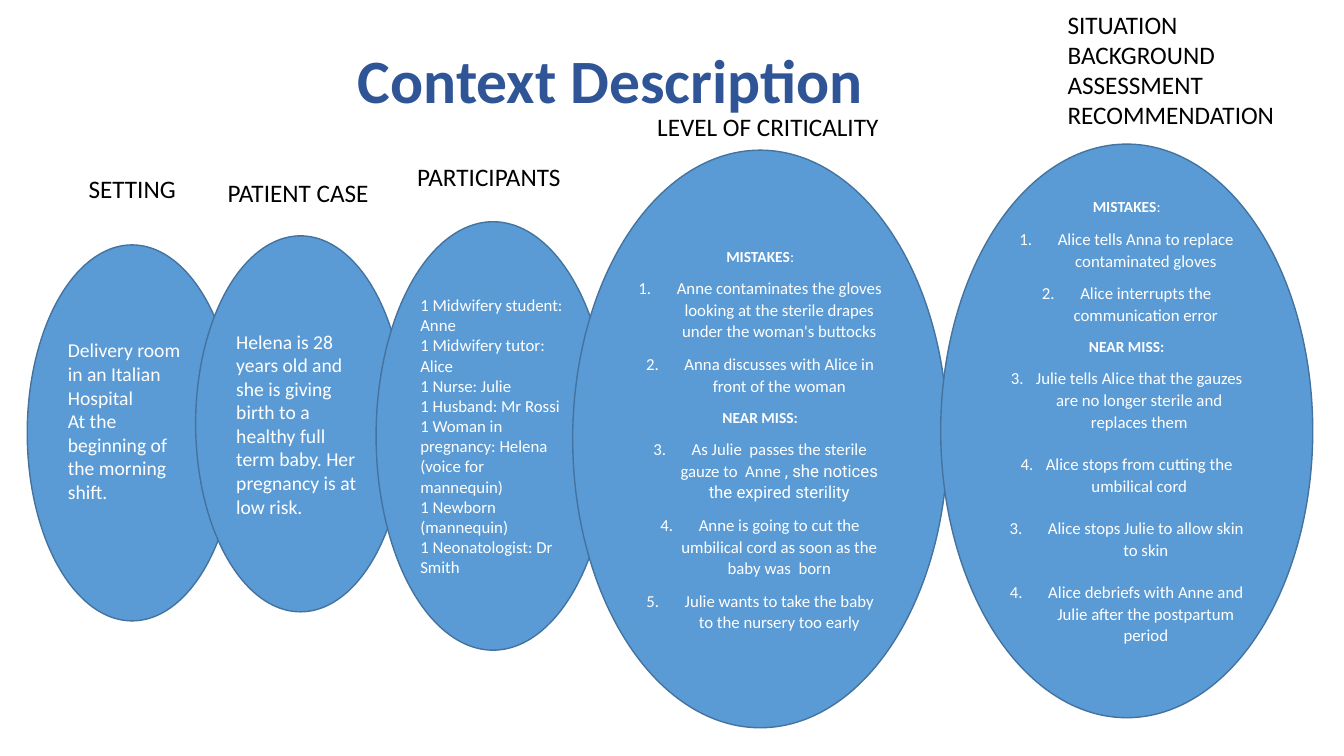
from lxml import etree
from pptx import Presentation
from pptx import util as u
from pptx.dml.color import RGBColor
from pptx.enum import shapes, text
from pptx.oxml.ns import qn

PX = 9144  # EMU in one px, 100 px to the inch
FONT = "Calibri"
WHITE, BLACK, NAVY = "FFFFFF", "000000", "2F5597"
FILL, OUTLINE = "5B9BD5", "43739E"
INSET = 5

TITLE = ("Context Description", (300, 36, 611, 84))

LABELS = [
    ("SETTING", (78, 167, 107, 40)),
    ("PATIENT CASE", (216, 171, 161, 40)),
    ("PARTICIPANTS", (404, 155, 163, 40)),
    ("LEVEL OF CRITICALITY", (642, 106, 243, 40)),
    ("SITUATION\nBACKGROUND\nASSESSMENT\nRECOMMENDATION", (1049, 4, 227, 131)),
]

# Plain ellipses: lines, box, size, bottom inset
FACTS = [
    (["Delivery room in an Italian Hospital",
      "At the beginning of the morning shift."], (27, 243, 208, 373), 14, 29),
    (["Helena is 28 years old and she is giving birth to a healthy full term baby. "
      "Her pregnancy is at low risk."], (194, 234, 208, 373), 14, INSET),
    (["1 Midwifery student: Anne",
      "1 Midwifery tutor: Alice",
      "1 Nurse: Julie",
      "1 Husband: Mr Rossi",
      "1 Woman in pregnancy: Helena (voice for mannequin)",
      "1 Newborn (mannequin)",
      "1 Neonatologist: Dr Smith"], (373, 220, 232, 425), 12, INSET),
]

# Numbered ellipses: items, box, bottom inset
# Item: number (None for a heading), runs of (text, font), indent px, space after pt
MISTAKES = (None, [("MISTAKES", FONT), (":", FONT)], 0, 8)
NEAR_MISS = (None, [("NEAR MISS:", FONT)], 0, 8)
REVIEWS = [
    ([MISTAKES,
      (1, [("Anne contaminates the gloves looking at the sterile drapes "
            "under the woman's buttocks", FONT)], 38, 8),
      (2, [("Anna discusses with Alice in front of the woman", FONT)], 38, 8),
      NEAR_MISS,
      (3, [("As Julie  passes the sterile gauze to  Anne ", FONT),
           (", she notices the expired sterility", "Roboto")], 38, 8),
      (4, [("Anne is going to cut the umbilical cord as soon as the baby was  born",
            FONT)], 38, 8),
      (5, [("Julie wants to take the baby to the nursery too early", FONT)], 38, 8)],
     (568, 149, 372, 573), INSET),
    ([MISTAKES,
      (1, [("Alice tells Anna to replace contaminated gloves", FONT)], 38, 8),
      (2, [("Alice interrupts the communication error", FONT)], 38, 8),
      NEAR_MISS,
      (3, [("Julie tells Alice that the gauzes are no longer sterile and replaces them",
            FONT)], 25, 15),
      (2, [("Alice stops from cutting the umbilical cord", FONT)], 25, 15),
      (3, [("Alice stops Julie to allow skin to skin", FONT)], 38, 15),
      (4, [("Alice debriefs with Anne and Julie after the postpartum period", FONT)],
       38, 0)],
     (933, 143, 369, 569), 25),
]


def color(value):
    return RGBColor.from_string(value)


def emu(box):
    return [length * PX for length in box]


def add_text(paragraph, words, size=18, hue=BLACK, bold=False, font=FONT):
    run = paragraph.add_run()
    run.text = words
    run.font.name, run.font.size, run.font.bold = font, u.Pt(size), bold
    run.font.color.rgb = color(hue)


def paragraphs(frame, count):
    """Yield count paragraphs, the first being the one the frame already has."""
    for index in range(count):
        yield frame.add_paragraph() if index else frame.paragraphs[0]


def add_ellipse(slide, box, bottom):
    shape = slide.shapes.add_shape(shapes.MSO_SHAPE.OVAL, *emu(box))
    shape.shadow.inherit = False
    shape.fill.solid()
    shape.fill.fore_color.rgb = color(FILL)
    shape.line.color.rgb = color(OUTLINE)
    shape.line.width = u.Pt(1)
    frame = shape.text_frame
    frame.word_wrap = True
    frame.vertical_anchor = text.MSO_ANCHOR.MIDDLE
    frame.margin_bottom = bottom * PX
    return frame


def number(paragraph, value, indent):
    properties = paragraph._p.get_or_add_pPr()
    properties.set("marL", str(indent * PX))
    properties.set("indent", str(-indent * PX))
    etree.SubElement(properties, qn("a:buAutoNum"), type="arabicPeriod",
                     startAt=str(value))


def add_title(slide):
    words, box = TITLE
    title = slide.shapes.title
    title.left, title.top, title.width, title.height = emu(box)
    title.text_frame.auto_size = text.MSO_AUTO_SIZE.NONE
    paragraph = title.text_frame.paragraphs[0]
    paragraph.alignment = text.PP_ALIGN.CENTER
    add_text(paragraph, words, size=44, hue=NAVY, bold=True)


def add_facts(slide, lines, box, size, bottom):
    frame = add_ellipse(slide, box, bottom)
    for paragraph, line in zip(paragraphs(frame, len(lines)), lines):
        paragraph.alignment = text.PP_ALIGN.LEFT
        add_text(paragraph, line, size=size, hue=WHITE)


def add_review(slide, items, box, bottom):
    frame = add_ellipse(slide, box, bottom)
    for paragraph, item in zip(paragraphs(frame, len(items)), items):
        value, runs, indent, after = item
        paragraph.alignment = text.PP_ALIGN.CENTER
        paragraph.line_spacing = 1.07
        paragraph.space_after = u.Pt(after)
        if value:
            number(paragraph, value, indent)
        for words, font in runs:
            add_text(paragraph, words, size=12 if value else 11, hue=WHITE,
                     bold=not value and words != ":", font=font)


def add_label(slide, words, box):
    frame = slide.shapes.add_textbox(*emu(box)).text_frame
    frame.word_wrap = False
    frame.auto_size = text.MSO_AUTO_SIZE.SHAPE_TO_FIT_TEXT
    lines = words.split("\n")
    for paragraph, line in zip(paragraphs(frame, len(lines)), lines):
        add_text(paragraph, line)


def main():
    presentation = Presentation()
    presentation.slide_width, presentation.slide_height = emu((1333, 750))
    slide = presentation.slides.add_slide(presentation.slide_layouts[5])
    add_title(slide)
    for facts in FACTS:
        add_facts(slide, *facts)
    for review in REVIEWS:
        add_review(slide, *review)
    for label in LABELS:
        add_label(slide, *label)
    presentation.save("out.pptx")


if __name__ == "__main__":
    main()
